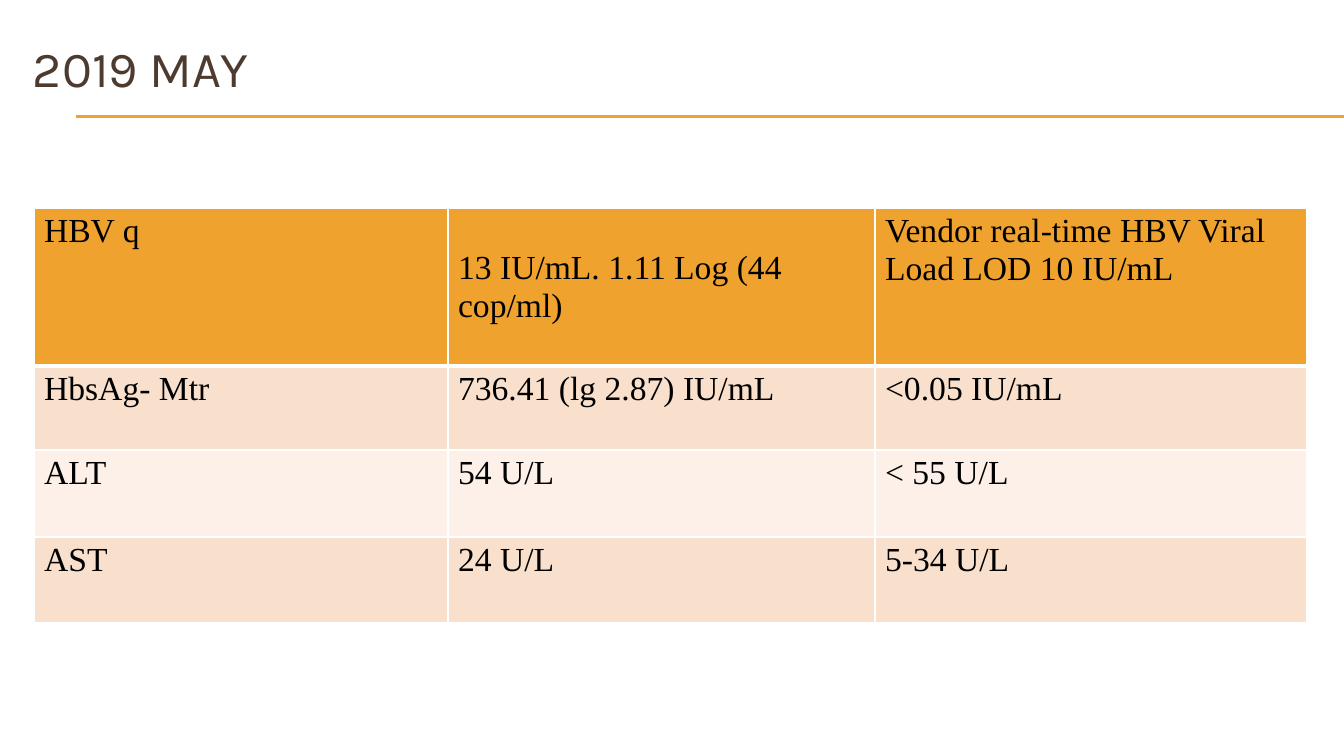
from lxml.etree import SubElement as Sub
from pptx import Presentation
from pptx.dml.color import RGBColor as RGB
from pptx.enum.shapes import MSO_CONNECTOR as Line
from pptx.enum.text import MSO_ANCHOR as Anchor
from pptx.oxml.ns import qn
from pptx.util import Pt

PX = 9071
HUE = {"gold": "F0A22E", "brown": "4E3B30", "black": "000000",
       "white": "FFFFFF", "peach": "F9E0CD", "cream": "FCF0E8"}


def style(par, face, size, hue):
    par.font.name = face
    par.font.size = Pt(size)
    par.font.color.rgb = RGB.from_string(HUE[hue])


def edge(cell, side, width):
    line = Sub(cell._tc.get_or_add_tcPr(), qn("a:ln" + side), w=str(Pt(width)))
    fill = Sub(line, qn("a:solidFill"))
    Sub(fill, qn("a:srgbClr"), val=HUE["white"])


deck = Presentation()
deck.slide_width, deck.slide_height = 1344 * PX, 756 * PX
slide = deck.slides.add_slide(deck.slide_layouts[6])
shapes = slide.shapes

for y in (116, 117):
    rule = shapes.add_connector(Line.STRAIGHT, 76 * PX, y * PX, 1344 * PX, y * PX)
    rule.line.color.rgb = RGB.from_string(HUE["gold"])
    rule.line.width = Pt(0.75)
    Sub(rule._element.spPr, qn("a:effectLst"))

title = shapes.add_textbox(23 * PX, 21 * PX, 1277 * PX, 93 * PX).text_frame
title.word_wrap = True
title.vertical_anchor = Anchor.MIDDLE
title.text = "2019 MAY"
style(title.paragraphs[0], "Karla", 36, "brown")

rows = [
    ("HBV q", "13 IU/mL. 1.11 Log (44 cop/ml)",
     "Vendor real-time HBV Viral Load LOD 10 IU/mL"),
    ("HbsAg- Mtr", "736.41 (lg 2.87) IU/mL", "<0.05 IU/mL"),
    ("ALT", "54 U/L", "< 55 U/L"),
    ("AST", "24 U/L", "5-34 U/L"),
]
wide = (414, 427, 432)
high = (158, 84, 87, 86)
fills = ("gold", "peach", "cream", "peach")

table = shapes.add_table(len(rows), len(wide), 34 * PX, 208 * PX,
                         sum(wide) * PX, sum(high) * PX).table
for col, width in zip(table.columns, wide):
    col.width = width * PX
for r, texts in enumerate(rows):
    table.rows[r].height = high[r] * PX
    for c, text in enumerate(texts):
        cell = table.cell(r, c)
        cell.text = text
        style(cell.text_frame.paragraphs[0], "Times New Roman", 24, "black")
        for side in "LRTB":
            thick = (r, side) in ((0, "B"), (1, "T"))
            edge(cell, side, 3 if thick else 1)
        cell.fill.solid()
        cell.fill.fore_color.rgb = RGB.from_string(HUE[fills[r]])
table.cell(0, 1).margin_top = 42 * PX

deck.save("out.pptx")
